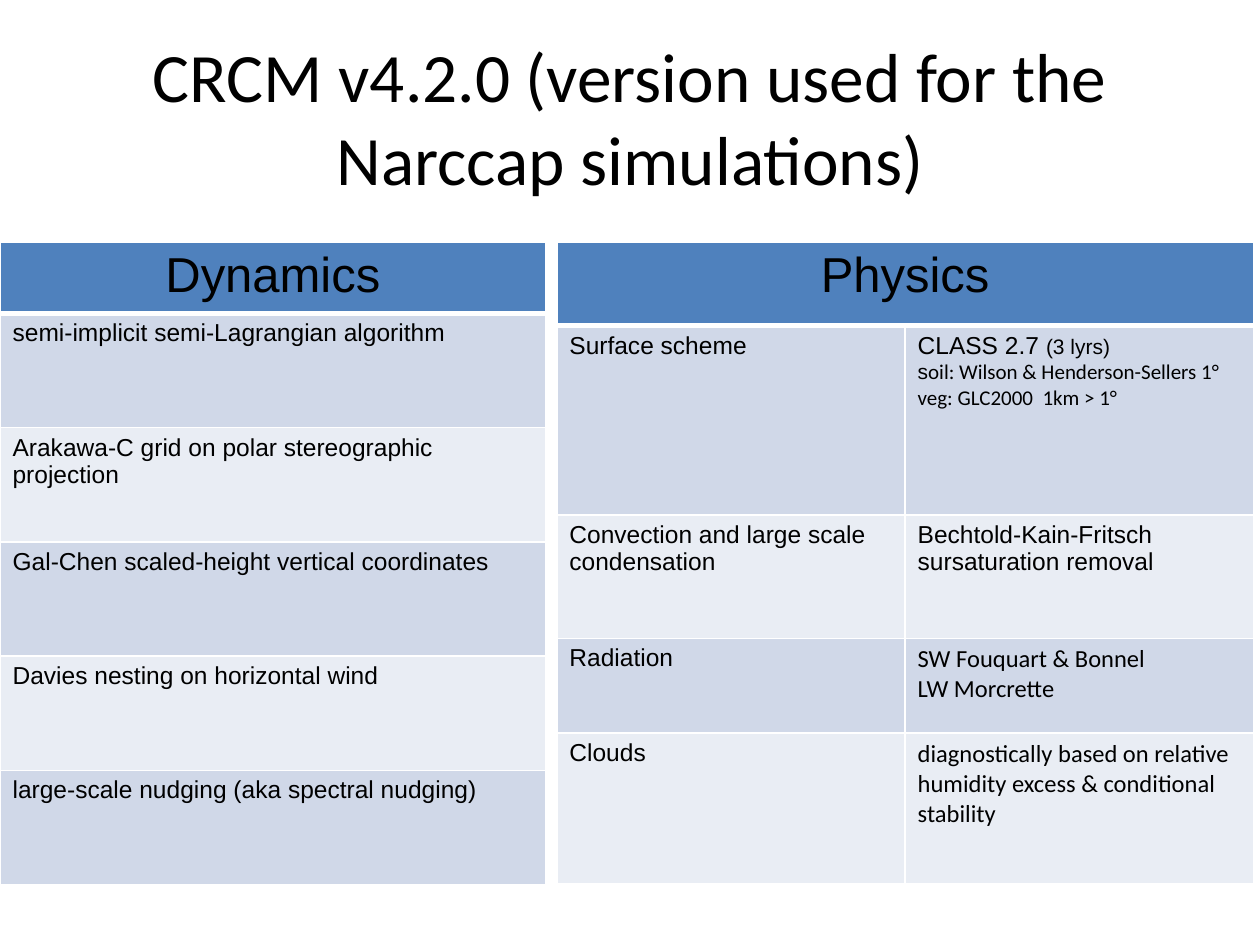
from lxml import etree
from pptx import Presentation
from pptx.dml.color import RGBColor
from pptx.enum.text import MSO_ANCHOR, PP_ALIGN
from pptx.oxml.ns import qn
from pptx.util import Pt

CENTER, LEFT = PP_ALIGN.CENTER, PP_ALIGN.LEFT
MIDDLE = MSO_ANCHOR.MIDDLE
COLORS = {"text": "000000", "header": "4F81BD", "odd": "D0D8E8",
          "even": "E9EDF4", "border": "FFFFFF"}
ARIAL, CALIBRI = "Arial", "Calibri"

DYNAMICS = ["semi-implicit semi-Lagrangian algorithm",
            "Arakawa-C grid on polar stereographic projection",
            "Gal-Chen scaled-height vertical coordinates",
            "Davies nesting on horizontal wind",
            "large-scale nudging (aka spectral nudging)"]
# Each scheme: name, then its paragraphs as lists of (text, size, font) runs
PHYSICS = [
    ("Surface scheme",
     [[("CLASS 2.7 ", 14, ARIAL), ("(3 lyrs)", 12, ARIAL)],
      [("s", 12, ARIAL), ("oil: Wilson & Henderson-Sellers 1°", 12, CALIBRI)],
      [("veg: GLC2000  1km > 1°", 12, CALIBRI)]]),
    ("Convection and large scale condensation",
     [[("Bechtold-Kain-Fritsch", 14, ARIAL)],
      [("sursaturation removal", 14, ARIAL)]]),
    ("Radiation",
     [[("SW Fouquart & Bonnel", 14, CALIBRI)],
      [("LW Morcrette", 14, CALIBRI)]]),
    ("Clouds",
     [[("diagnostically based on relative humidity excess & conditional stability",
        14, CALIBRI)]]),
]


def add_run(p, text, size=14, font=ARIAL):
    r = p.add_run()
    r.text = text
    r.font.size = Pt(size)
    r.font.name = font
    r.font.color.rgb = RGBColor.from_string(COLORS["text"])


def write(tf, paragraphs, align=LEFT):
    """Fill a text frame with paragraphs, each a list of (text, size, font)."""
    for i, runs in enumerate(paragraphs):
        p = tf.paragraphs[0] if i == 0 else tf.add_paragraph()
        p.alignment = align
        for run in runs:
            add_run(p, *run)


def style_cell(cell, fill, bottom=1):
    cell.fill.solid()
    cell.fill.fore_color.rgb = RGBColor.from_string(COLORS[fill])
    tc_pr = cell._tc.get_or_add_tcPr()
    widths = {"a:lnL": 1, "a:lnR": 1, "a:lnT": 1, "a:lnB": bottom}
    for i, (tag, width) in enumerate(widths.items()):
        ln = etree.Element(qn(tag), w=str(Pt(width)))
        solid = etree.SubElement(ln, qn("a:solidFill"))
        etree.SubElement(solid, qn("a:srgbClr"), val=COLORS["border"])
        tc_pr.insert(i, ln)


def add_title(s, x, y, w, h):
    tf = s.shapes.add_textbox(Pt(x), Pt(y), Pt(w), Pt(h)).text_frame
    tf.word_wrap = True
    tf.vertical_anchor = MIDDLE
    write(tf, [[("CRCM v4.2.0 (version used for the Narccap simulations)",
                 39.6, CALIBRI)]], align=CENTER)


def add_banded_table(s, x, y, w, heading, rows, heights):
    """Table with one heading across the top; rows hold lists of paragraphs."""
    n_cols = len(rows[0])
    table = s.shapes.add_table(len(heights), n_cols, Pt(x), Pt(y), Pt(w),
                               Pt(sum(heights))).table
    for col in table.columns:
        col.width = Pt(w / n_cols)
    for row, height in zip(table.rows, heights):
        row.height = Pt(height)
    for i, row in enumerate(table.rows):
        fill = "header" if i == 0 else "odd" if i % 2 else "even"
        for cell in row.cells:
            style_cell(cell, fill, bottom=3 if i == 0 else 1)
    if n_cols > 1:
        table.cell(0, 0).merge(table.cell(0, n_cols - 1))
    write(table.cell(0, 0).text_frame, [[(heading, 28, ARIAL)]], align=CENTER)
    for i, row in enumerate(rows, 1):
        for j, paragraphs in enumerate(row):
            write(table.cell(i, j).text_frame, paragraphs)


def main():
    prs = Presentation()
    prs.slide_width, prs.slide_height = Pt(720), Pt(540)
    s = prs.slides.add_slide(prs.slide_layouts[6])
    add_title(s, 36, 21.6, 648, 90)
    top = 138.2
    add_banded_table(s, 318.2, top, 398, "Physics",
                     [([[(name,)]], details) for name, details in PHYSICS],
                     [48, 108, 70.6, 54, 86.4])
    add_banded_table(s, 0, top, 311.8, "Dynamics",
                     [([[(text,)]],) for text in DYNAMICS],
                     [40.4] + [65.3] * len(DYNAMICS))
    prs.save("out.pptx")


if __name__ == "__main__":
    main()
